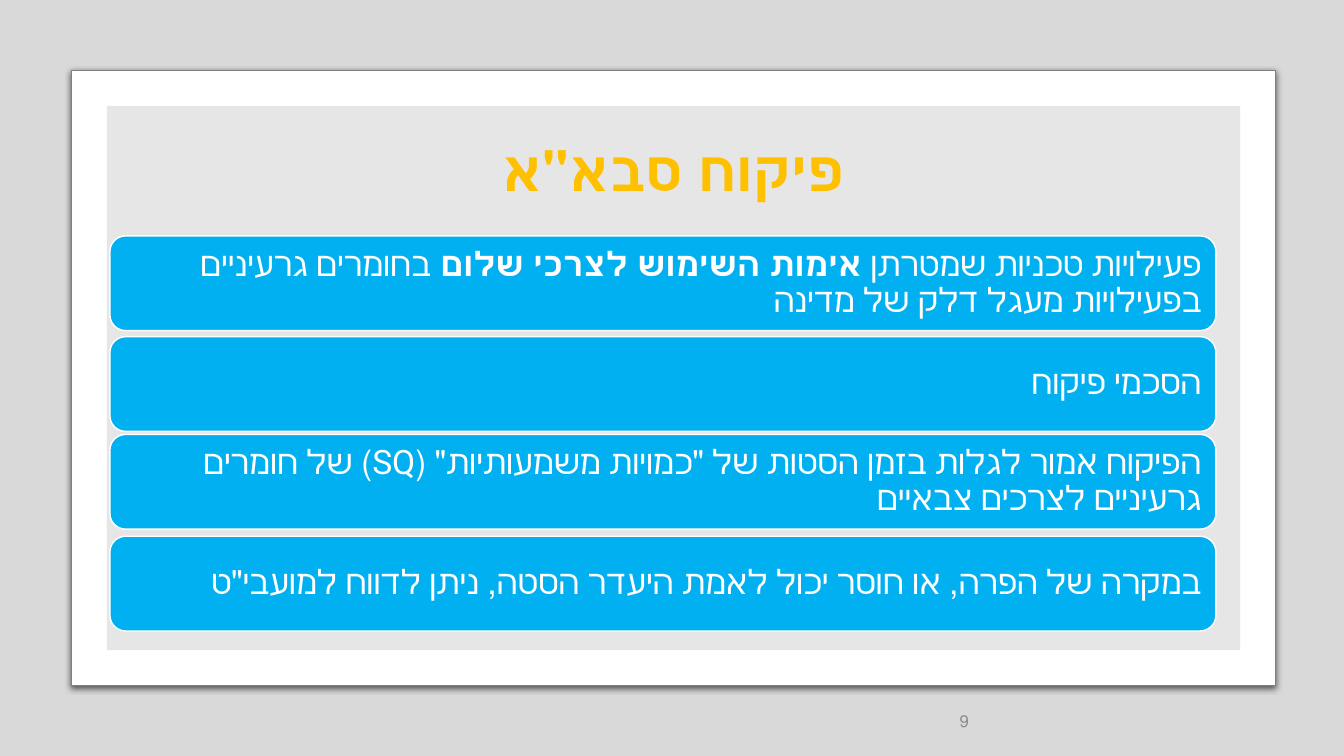
import pptx
import pptx.dml.color
import pptx.enum.shapes
import pptx.enum.text
import pptx.oxml
import pptx.oxml.ns
import pptx.util

Inches = pptx.util.Inches
Pt = pptx.util.Pt
Shapes = pptx.enum.shapes.MSO_SHAPE
Align = pptx.enum.text.PP_ALIGN

RULES = [
    (2.34, [("פעילויות טכניות שמטרתן ", False),
            ("אימות השימוש לצרכי שלום ", True),
            ("בחומרים גרעיניים בפעילויות מעגל דלק של מדינה", False)]),
    (3.34, [("הסכמי פיקוח", False)]),
    (4.31, [('הפיקוח אמור לגלות בזמן הסטות של "כמויות משמעותיות" (SQ) '
             'של חומרים גרעיניים לצרכים צבאיים', False)]),
    (5.32, [('במקרה של הפרה, או חוסר יכול לאמת היעדר הסטה, '
             'ניתן לדווח למועבי"ט', False)]),
]


def color(hex_code):
    return pptx.dml.color.RGBColor.from_string(hex_code)


def xml(markup):
    namespace = pptx.oxml.ns.nsdecls("a")
    return pptx.oxml.parse_xml(markup.replace(">", f" {namespace}>", 1))


def add_panel(slide, box, fill, line=None, width=1, kind=Shapes.RECTANGLE):
    panel = slide.shapes.add_shape(kind, *map(Inches, box))
    panel.shadow.inherit = False
    panel.fill.solid()
    panel.fill.fore_color.rgb = color(fill)
    if line:
        panel.line.color.rgb = color(line)
        panel.line.width = Pt(width)
    else:
        panel.line.fill.background()
    return panel


def write_hebrew(frame, runs, size, font, fill, align, spacing=1, after=6):
    frame.word_wrap = True
    frame.vertical_anchor = pptx.enum.text.MSO_ANCHOR.MIDDLE
    paragraph = frame.paragraphs[0]
    paragraph.alignment = align
    paragraph.line_spacing = spacing
    paragraph.space_after = Pt(after)
    paragraph._p.get_or_add_pPr().set("rtl", "1")
    paragraph.font.size = Pt(size)
    paragraph.font.name = font
    paragraph.font.color.rgb = color(fill)
    for text, bold in runs:
        run = paragraph.add_run()
        run.text = text
        run.font.bold = bold
    return paragraph


def add_backdrop(slide, box):
    left, top, width, height = box
    shade = add_panel(slide, box, "000000")
    shade.fill._xPr.find(".//" + pptx.oxml.ns.qn("a:srgbClr")).append(
        xml('<a:alpha val="15000"></a:alpha>'))

    frame = add_panel(slide, (left + 0.71, top + 0.7, width - 1.39, height - 1.4),
                      "FFFFFF", "808080", 0.75, Shapes.ROUNDED_RECTANGLE)
    frame.adjustments[0] = 0
    effects = frame._element.spPr.find(pptx.oxml.ns.qn("a:effectLst"))
    effects.append(xml(
        f'<a:outerShdw blurRad="{Pt(4.5)}" dist="{Pt(1.5)}" dir="5400000">'
        '<a:srgbClr val="000000"><a:alpha val="63000"/></a:srgbClr></a:outerShdw>'))

    add_panel(slide, (left + 1.06, top + 1.05, width - 2.09, height - 2.1), "E7E6E6")


def add_page_number(slide, box, number):
    page = slide.shapes.add_textbox(*map(Inches, box))
    write_hebrew(page.text_frame, [(number, False)], 12, "Calibri", "8C8C8C",
                 Align.LEFT)


def add_title(slide, box, text):
    title = slide.shapes.add_textbox(*map(Inches, box))
    paragraph = write_hebrew(title.text_frame, [(text, True)], 40, "Roboto",
                             "FFC000", Align.CENTER, 0.9)
    paragraph.runs[0].font._element.insert(0, xml(
        f'<a:ln w="{Pt(0.75)}"><a:solidFill><a:srgbClr val="FFFFFF"/>'
        '</a:solidFill></a:ln>'))


def add_rule(slide, box, runs):
    rule = add_panel(slide, box, "00B0F0", "FFFFFF", 1, Shapes.ROUNDED_RECTANGLE)
    frame = rule.text_frame
    frame.margin_left = frame.margin_right = Inches(0.1)
    frame.margin_top = frame.margin_bottom = Inches(0.1)
    write_hebrew(frame, runs, 24, "Roboto", "FFFFFF", Align.RIGHT, 0.9, 8.4)


def main():
    deck = pptx.Presentation()
    deck.slide_width = Inches(13.33)
    deck.slide_height = Inches(7.5)
    slide = deck.slides.add_slide(deck.slide_layouts[6])
    add_backdrop(slide, (0, 0, 13.33, 7.5))
    add_page_number(slide, (9.42, 6.95, 3, 0.4), "9")
    add_title(slide, (1.41, 1.21, 10.54, 1.01), 'פיקוח סבא"א')
    for top, runs in RULES:
        add_rule(slide, (1.09, top, 10.97, 0.94), runs)
    deck.save("out.pptx")


if __name__ == "__main__":
    main()
